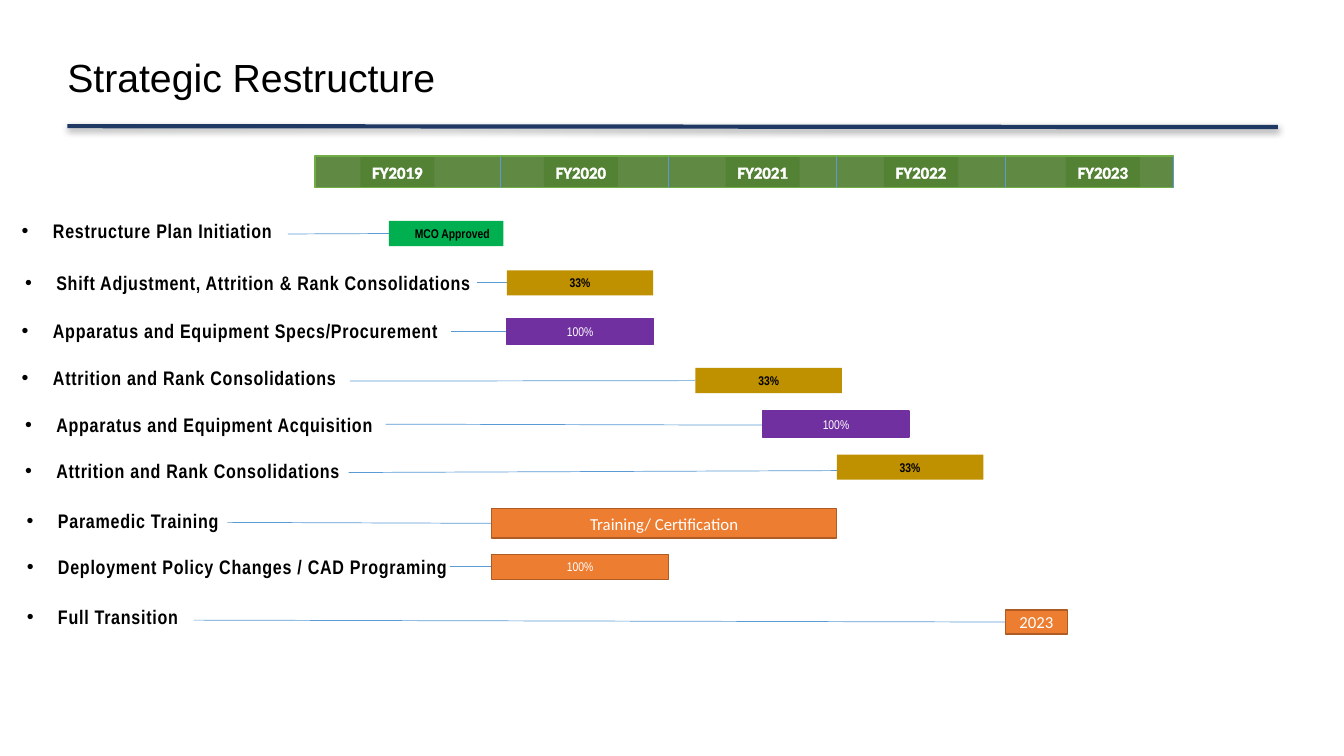
from dataclasses import dataclass

import pptx
import pptx.dml.color
import pptx.enum.shapes
import pptx.enum.text
import pptx.oxml
import pptx.oxml.ns
import pptx.util

Inches = pptx.util.Inches
Pt = pptx.util.Pt
PP_ALIGN = pptx.enum.text.PP_ALIGN
MSO_ANCHOR = pptx.enum.text.MSO_ANCHOR
NS = pptx.oxml.ns.nsdecls("a")


@dataclass(frozen=True)
class Theme:
    black: str = "000000"
    white: str = "FFFFFF"
    navy: str = "203864"
    leader: str = "5B9BD5"
    band: str = "548235"
    band_line: str = "70AD47"
    approved: str = "00B050"
    gold: str = "BF9000"
    purple: str = "7030A0"
    orange: str = "ED7D31"
    orange_line: str = "AF5C24"
    heading: str = "Arial"
    narrow: str = "Arial Narrow"
    body: str = "Calibri"
    title_size: float = 28
    label_size: float = 14
    large_size: float = 12
    small_size: float = 9


@dataclass(frozen=True)
class Grid:
    """One column is a fiscal year and one row is a task, in inches."""
    left: float = 3.29
    top: float = 2.12
    col: float = 1.67
    row: float = 0.48

    def x(self, cols: float) -> int:
        return Inches(self.left + cols * self.col)

    def y(self, rows: float) -> int:
        return Inches(self.top + rows * self.row)

    def box(self, x: float, y: float, w: float, h: float) -> tuple:
        return self.x(x), self.y(y), Inches(w * self.col), Inches(h * self.row)


T = Theme()
G = Grid()


@dataclass(frozen=True)
class Type:
    font: str
    size: float
    color: str
    bold: bool = False


@dataclass(frozen=True)
class BarStyle:
    fill: str
    line: str | None
    type: Type
    height: float
    indent: float = 0


@dataclass(frozen=True)
class Task:
    """Positions are in columns and rows of the grid."""
    label: str
    label_x: float
    label_y: float
    label_w: float
    leader_x: float
    leader_y1: float
    leader_y2: float
    bar_text: str
    bar_x: float
    bar_y: float
    bar_w: float
    style: BarStyle


@dataclass(frozen=True)
class Year:
    text: str
    x: float


TITLE = Type(T.heading, T.title_size, T.black)
LABEL = Type(T.narrow, T.label_size, T.black, True)
YEAR = Type(T.body, T.large_size, T.white, True)
DARK = Type(T.narrow, T.small_size, T.black, True)
LIGHT = Type(T.narrow, T.small_size, T.white)
LARGE = Type(T.body, T.large_size, T.white)

APPROVED = BarStyle(T.approved, None, DARK, 0.52, 0.12)
ATTRITION = BarStyle(T.gold, None, DARK, 0.52)
APPARATUS = BarStyle(T.purple, T.purple, LIGHT, 0.54)
TRAINING = BarStyle(T.orange, T.orange_line, LARGE, 0.6)
POLICY = BarStyle(T.orange, T.orange_line, LIGHT, 0.52)
FINAL = BarStyle(T.orange, T.orange_line, LARGE, 0.5)

YEARS = [Year("FY2019", 0.17), Year("FY2020", 1.26), Year("FY2021", 2.34),
         Year("FY2022", 3.28), Year("FY2023", 4.36)]

TASKS = [
    Task("Restructure Plan Initiation", -1.9, 0, 1.93,
         -0.26, 0.42, 0.41, "MCO Approved", 0.34, 0.15, 0.68, APPROVED),
    Task("Shift Adjustment, Attrition & Rank Consolidations", -1.88, 1.08, 3.01,
         0.86, 1.42, 1.42, "33%", 1.04, 1.17, 0.87, ATTRITION),
    Task("Apparatus and Equipment Specs/Procurement", -1.9, 2.08, 2.62,
         0.71, 2.44, 2.44, "100%", 1.04, 2.17, 0.87, APPARATUS),
    Task("Attrition and Rank Consolidations", -1.9, 3.04, 2.61,
         0.11, 3.46, 3.45, "33%", 2.16, 3.19, 0.87, ATTRITION),
    Task("Apparatus and Equipment Acquisition", -1.88, 4.02, 2.21,
         0.32, 4.35, 4.37, "100%", 2.56, 4.08, 0.87, APPARATUS),
    Task("Attrition and Rank Consolidations", -1.88, 4.96, 2.61,
         0.1, 5.35, 5.31, "33%", 3, 4.98, 0.87, ATTRITION),
    Task("Paramedic Training", -1.87, 6, 1.63,
         -0.62, 6.38, 6.4, "Training/ Certification", 0.95, 6.1, 2.05, TRAINING),
    Task("Deployment Policy Changes / CAD Programing", -1.87, 6.96, 2.89,
         0.7, 7.29, 7.29, "100%", 0.95, 7.04, 1.05, POLICY),
    Task("Full Transition", -1.87, 7.98, 1.37,
         -0.82, 8.4, 8.44, "2023", 4, 8.19, 0.37, FINAL),
]


def rgb(color: str):
    return pptx.dml.color.RGBColor.from_string(color)


def write(p, text: str, kind: Type):
    r = p.add_run()
    r.text = text
    r.font.name = kind.font
    r.font.size = Pt(kind.size)
    r.font.bold = kind.bold
    r.font.color.rgb = rgb(kind.color)
    return r


def add_line(shapes, x1: float, y1: float, x2: float, y2: float,
             color: str = T.leader, width: float = 0.5, effect: str = ""):
    s = shapes.add_connector(pptx.enum.shapes.MSO_CONNECTOR.STRAIGHT,
                             G.x(x1), G.y(y1), G.x(x2), G.y(y2))
    s.line.color.rgb = rgb(color)
    s.line.width = Pt(width)
    s._element.spPr.append(pptx.oxml.parse_xml(
        f"<a:effectLst {NS}>{effect}</a:effectLst>"))


def add_rect(shapes, box: tuple, fill: str, line: str | None = None):
    s = shapes.add_shape(pptx.enum.shapes.MSO_SHAPE.RECTANGLE, *box)
    s.shadow.inherit = False
    s.fill.solid()
    s.fill.fore_color.rgb = rgb(fill)
    if line:
        s.line.color.rgb = rgb(line)
        s.line.width = Pt(1)
    else:
        s.line.fill.background()
    return s


def write_centered(s, text: str, kind: Type, wrap: bool = True):
    tf = s.text_frame
    tf.word_wrap = wrap
    tf.vertical_anchor = MSO_ANCHOR.MIDDLE
    p = tf.paragraphs[0]
    p.alignment = PP_ALIGN.CENTER
    return write(p, text, kind)


def add_title(shapes):
    tf = shapes.add_textbox(*G.box(-1.57, -3.73, 5.49, 1.92)).text_frame
    tf.word_wrap = True
    tf.vertical_anchor = MSO_ANCHOR.MIDDLE
    tf.margin_left = tf.margin_right = tf.margin_top = tf.margin_bottom = 0
    p = tf.paragraphs[0]
    p.line_spacing = 0.9
    write(p, "Strategic Restructure", TITLE)
    shadow = (f'<a:outerShdw blurRad="{Pt(5)}" dist="{Pt(1.6)}" dir="5400000">'
              f'<a:srgbClr val="{T.black}"><a:alpha val="38000"/></a:srgbClr>'
              '</a:outerShdw>')
    add_line(shapes, -1.57, -1.81, 5.62, -1.79, T.navy, 3, shadow)


def add_timeline(shapes):
    band = add_rect(shapes, G.box(-0.1, -1.19, 5.1, 0.65), T.band, T.band_line)
    color = band._element.spPr.find(".//" + pptx.oxml.ns.qn("a:srgbClr"))
    color.append(pptx.oxml.parse_xml(f'<a:alpha {NS} val="93000"/>'))
    for n, year in enumerate(YEARS, 1):
        s = add_rect(shapes, G.box(year.x, -1.17, 0.44, 0.62), T.band)
        r = write_centered(s, year.text, YEAR, wrap=False)
        r.font._element.insert(0, pptx.oxml.parse_xml(
            f'<a:ln {NS} w="{Pt(0.8)}"><a:solidFill><a:srgbClr val="{T.white}"/>'
            '</a:solidFill></a:ln>'))
        add_line(shapes, n, -1.17, n, -0.54)


def add_task(shapes, task: Task):
    box = G.box(task.label_x, task.label_y, task.label_w, 0.7)
    tf = shapes.add_textbox(*box).text_frame
    tf.word_wrap = True
    p = tf.paragraphs[0]
    pPr = p._p.get_or_add_pPr()
    pPr.set("marL", str(Inches(0.31)))
    pPr.set("indent", str(Inches(-0.31)))
    pPr.append(pptx.oxml.parse_xml(f'<a:buFont {NS} typeface="{T.heading}"/>'))
    pPr.append(pptx.oxml.parse_xml(f'<a:buChar {NS} char="•"/>'))
    write(p, task.label, LABEL).font._element.set("spc", "50")

    add_line(shapes, task.leader_x, task.leader_y1, task.bar_x, task.leader_y2)
    style = task.style
    s = add_rect(shapes, G.box(task.bar_x, task.bar_y, task.bar_w, style.height),
                 style.fill, style.line)
    write_centered(s, task.bar_text, style.type)
    if style.indent:
        pPr = s.text_frame.paragraphs[0]._p.get_or_add_pPr()
        pPr.set("marL", str(Inches(style.indent)))


def main():
    prs = pptx.Presentation()
    prs.slide_width, prs.slide_height = Inches(13.33), Inches(7.5)
    shapes = prs.slides.add_slide(prs.slide_layouts[6]).shapes
    add_title(shapes)
    add_timeline(shapes)
    for task in TASKS:
        add_task(shapes, task)
    prs.save("out.pptx")


if __name__ == "__main__":
    main()
